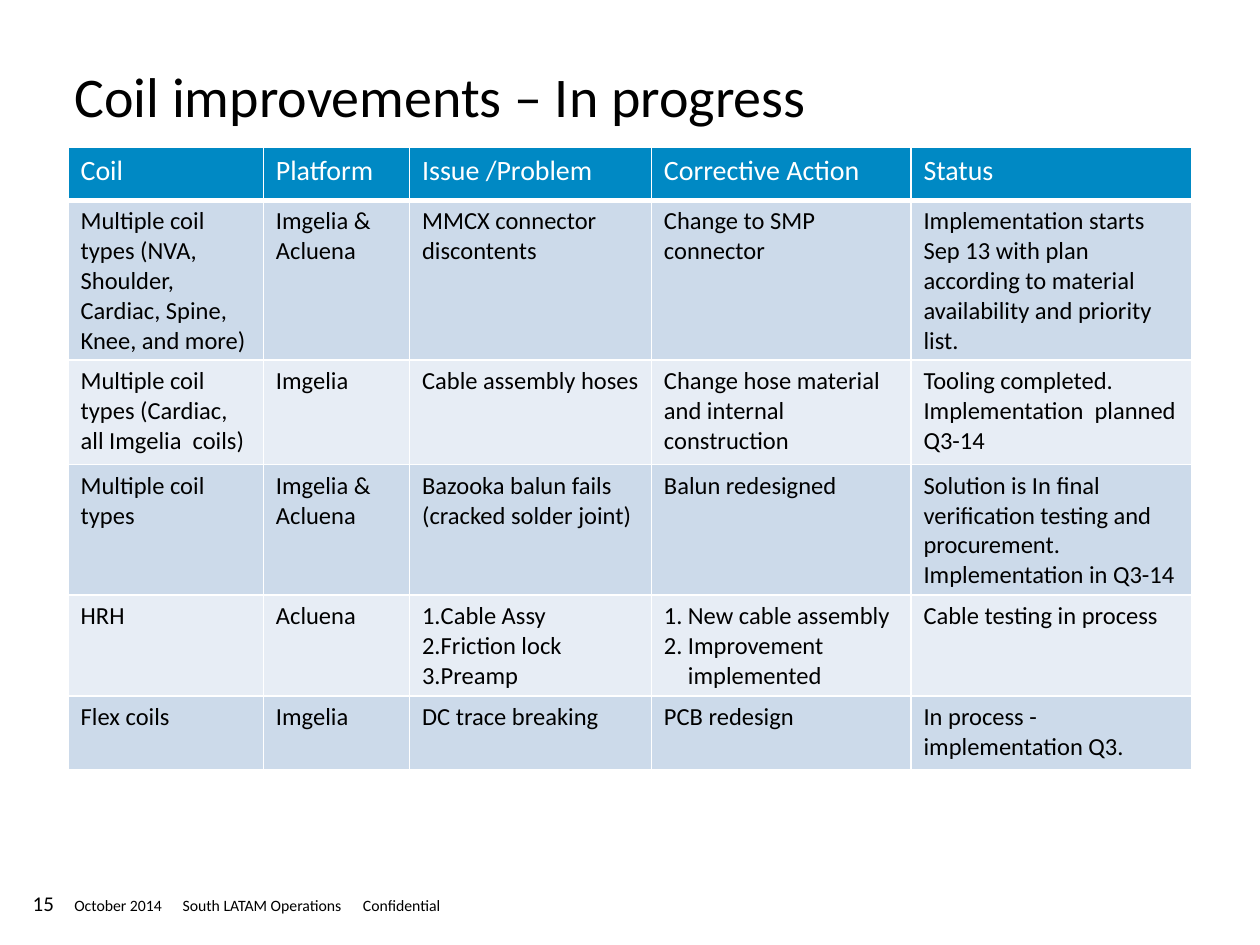
from lxml import etree
from pptx import Presentation
from pptx.dml.color import RGBColor
from pptx.enum.text import MSO_ANCHOR, PP_ALIGN
from pptx.oxml.ns import qn
from pptx.util import Inches, Pt

TOP = MSO_ANCHOR.TOP
LEFT = PP_ALIGN.LEFT
FONT = "Calibri"
HUES = {"ink": "000000", "white": "FFFFFF", "head": "0089C4",
        "dark": "CCDAEA", "light": "E7EDF5"}
COLS = [1.55, 1.16, 1.92, 2.06, 2.23]
HEIGHTS = [0.42, 0.83, 0.83, 0.59, 0.59, 0.59]
INDENTS = {2: 0.12, 3: 0.19}
ROWS = [
    ["Coil", "Platform", "Issue /Problem", "Corrective Action", "Status"],
    ["Multiple coil types (NVA, Shoulder, Cardiac, Spine, Knee, and more)",
     "Imgelia & Acluena", "MMCX connector discontents",
     "Change to SMP connector",
     "Implementation starts Sep 13 with plan according to material "
     "availability and priority list."],
    ["Multiple coil types (Cardiac, all Imgelia  coils)", "Imgelia",
     "Cable assembly hoses", "Change hose material and internal construction",
     "Tooling completed. Implementation  planned Q3-14"],
    ["Multiple coil types", "Imgelia & Acluena",
     "Bazooka balun fails (cracked solder joint)", "Balun redesigned",
     "Solution is In final verification testing and procurement. "
     "Implementation in Q3-14"],
    ["HRH", "Acluena", ["Cable Assy", "Friction lock", "Preamp"],
     ["New cable assembly", "Improvement implemented"],
     "Cable testing in process"],
    ["Flex coils", "Imgelia", "DC trace breaking", "PCB redesign",
     "In process - implementation Q3."],
]


def color(name):
    """Return the named colour."""
    return RGBColor.from_string(HUES[name])


def style(para, size, hue="ink"):
    """Set the font of a paragraph."""
    font = para.font
    font.name, font.size, font.bold = FONT, Pt(size), False
    font.color.rgb = color(hue)


def clear(frame):
    """Remove insets and anchor the text at the top left."""
    frame.margin_left = frame.margin_right = 0
    frame.margin_top = frame.margin_bottom = 0
    frame.vertical_anchor = TOP
    frame.word_wrap = True


def place(shape, *box):
    """Move and size a shape, in inches."""
    shape.left, shape.top, shape.width, shape.height = map(Inches, box)


def add_title(slide, text):
    """Fill and format the title placeholder."""
    title = slide.shapes.title
    place(title, 0.59, 0.49, 8.82, 1.1)
    clear(title.text_frame)
    title.text_frame.text = text
    para = title.text_frame.paragraphs[0]
    para.alignment = LEFT
    style(para, 32)


def add_text(slide, box, text, size, tabs=()):
    """Add one line of text with optional tab stops."""
    frame = slide.shapes.add_textbox(*map(Inches, box)).text_frame
    clear(frame)
    para = frame.paragraphs[0]
    para.text = text
    if tabs:
        stops = etree.SubElement(para._p.get_or_add_pPr(), qn("a:tabLst"))
        for pos in tabs:
            etree.SubElement(stops, qn("a:tab"), pos=str(Inches(pos)), algn="l")
    style(para, size)


def number(para, indent):
    """Number a paragraph with a hanging indent."""
    props = para._p.get_or_add_pPr()
    props.set("marL", str(Inches(indent)))
    props.set("indent", str(-Inches(indent)))
    etree.SubElement(props, qn("a:buFont"), typeface="+mj-lt")
    etree.SubElement(props, qn("a:buAutoNum"), type="arabicPeriod")


def border(cell, base):
    """Draw white cell borders, with the given bottom width."""
    props = cell._tc.get_or_add_tcPr()
    for side, width in (("L", 1), ("R", 1), ("T", 1), ("B", base)):
        line = etree.SubElement(props, qn(f"a:ln{side}"), w=str(Pt(width)))
        fill = etree.SubElement(line, qn("a:solidFill"))
        etree.SubElement(fill, qn("a:srgbClr"), val=HUES["white"])


def fill_cell(cell, item, row, col):
    """Write and format one table cell."""
    head = row == 0
    border(cell, 3 if head else 1)
    cell.fill.solid()
    cell.fill.fore_color.rgb = color(
        "head" if head else "dark" if row % 2 else "light")
    listed = isinstance(item, list)
    cell.text = "\n".join(item) if listed else item
    for para in cell.text_frame.paragraphs:
        if listed:
            number(para, INDENTS[col])
        style(para, 16 if head else 14, "white" if head else "ink")


def add_grid(slide):
    """Add the table of coil improvements."""
    box = map(Inches, (0.54, 1.17, sum(COLS), sum(HEIGHTS)))
    table = slide.shapes.add_table(len(ROWS), len(COLS), *box).table
    for col, width in zip(table.columns, COLS):
        col.width = Inches(width)
    for row, height in zip(table.rows, HEIGHTS):
        row.height = Inches(height)
    for r, items in enumerate(ROWS):
        for c, item in enumerate(items):
            fill_cell(table.cell(r, c), item, r, c)


def main():
    """Build and save the slide."""
    deck = Presentation()
    deck.slide_width, deck.slide_height = Inches(10), Inches(7.5)
    slide = deck.slides.add_slide(deck.slide_layouts[5])
    add_text(slide, (0.26, 7.07, 0.55, 0.2), "15", 12)
    add_text(slide, (0.59, 7.11, 4.96, 0.15),
             "October 2014\tSouth LATAM Operations\tConfidential", 9,
             (0.86, 2.29))
    add_title(slide, "Coil improvements – In progress")
    add_grid(slide)
    deck.save("out.pptx")


if __name__ == "__main__":
    main()
